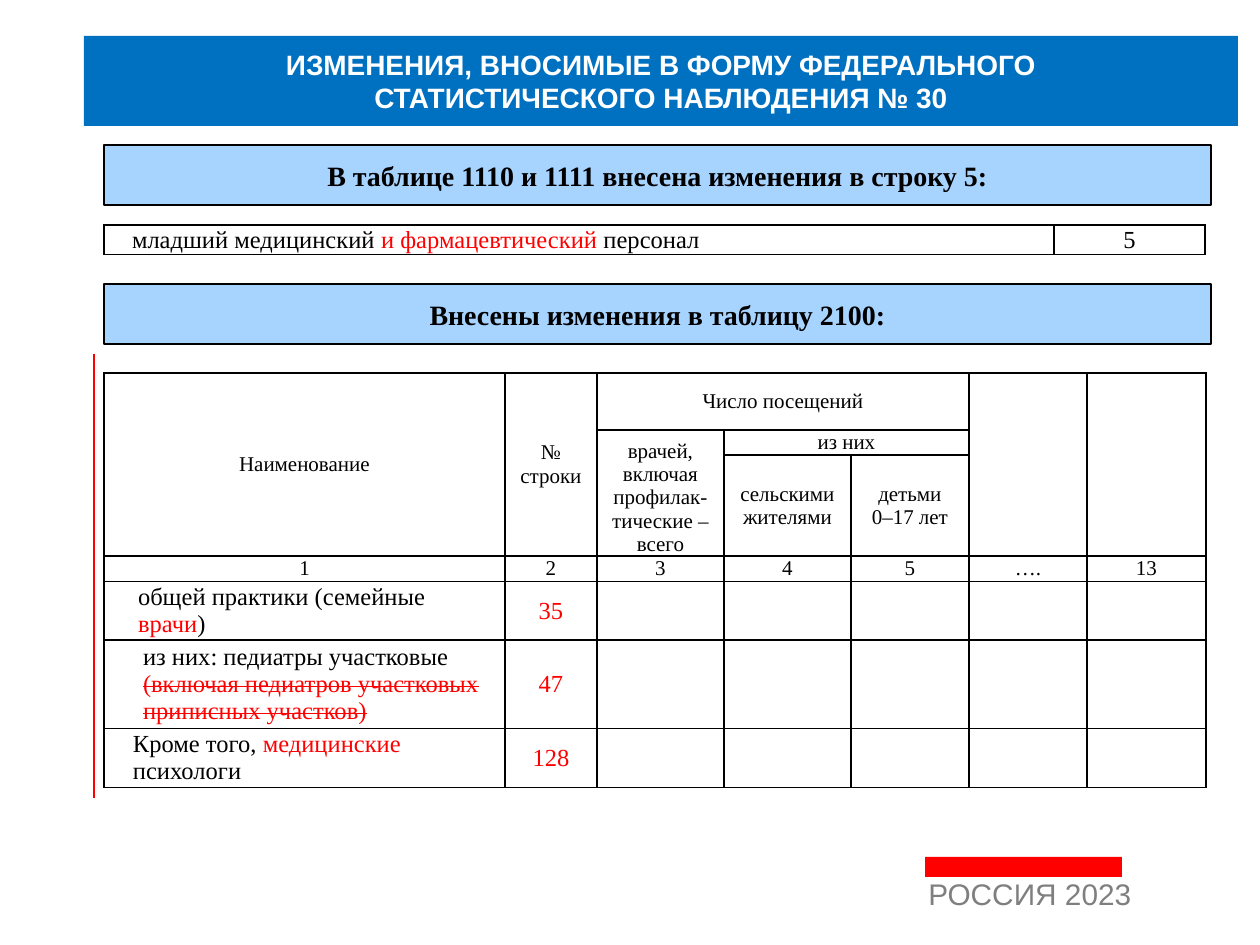
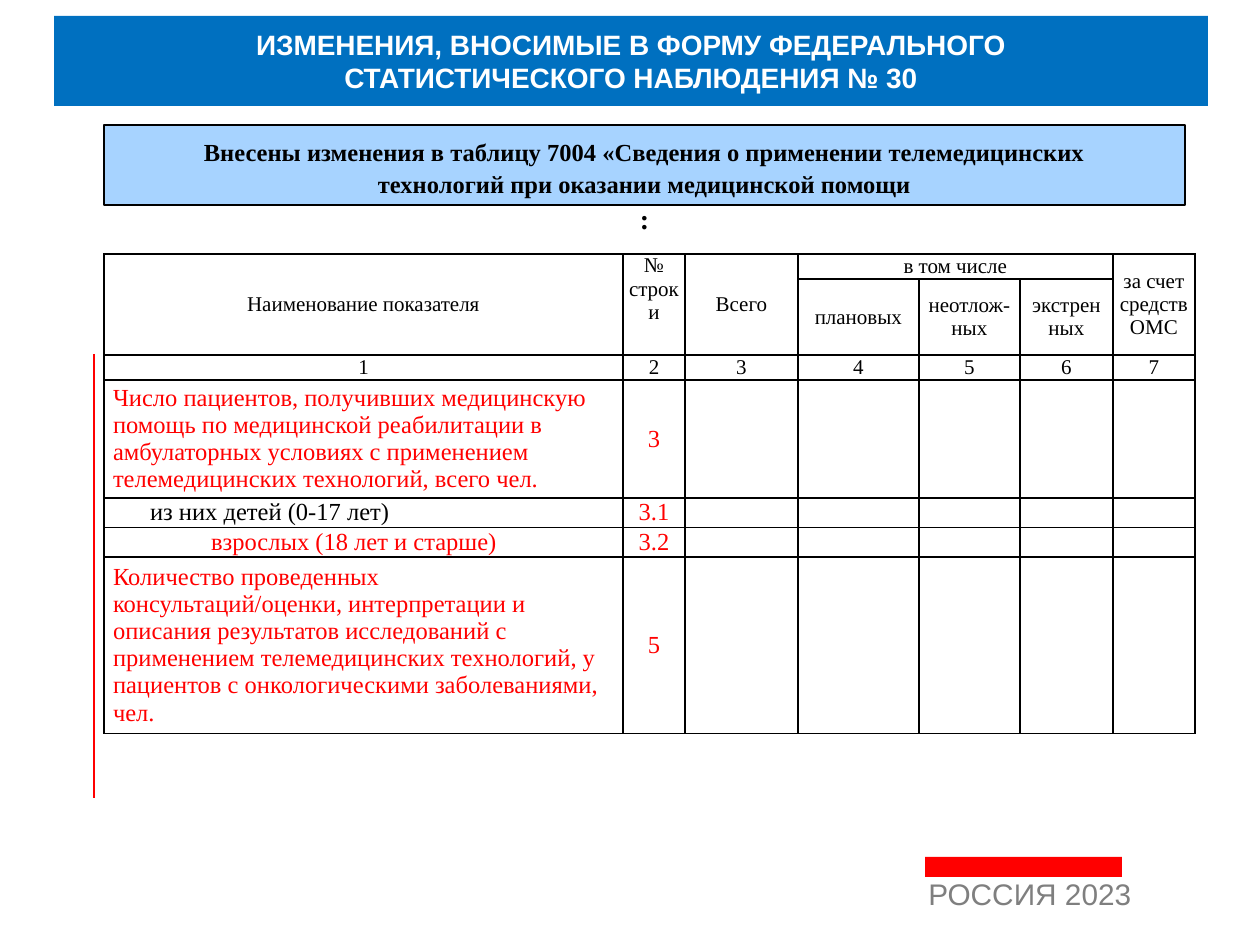
from dataclasses import dataclass

from lxml import etree
from pptx import Presentation
from pptx.dml.color import RGBColor
from pptx.enum.shapes import MSO_CONNECTOR, MSO_SHAPE
from pptx.enum.text import MSO_ANCHOR, PP_ALIGN
from pptx.oxml.ns import qn
from pptx.util import Emu, Pt

RECT, STRAIGHT = MSO_SHAPE.RECTANGLE, MSO_CONNECTOR.STRAIGHT
LEFT, CENTER = PP_ALIGN.LEFT, PP_ALIGN.CENTER
TOP, MIDDLE, BOTTOM = MSO_ANCHOR.TOP, MSO_ANCHOR.MIDDLE, MSO_ANCHOR.BOTTOM
PX = 914400 / 126


@dataclass(frozen=True)
class Theme:
    title_fill: str = "0070C0"
    banner_fill: str = "A7D3FF"
    red: str = "FF0000"
    black: str = "000000"
    white: str = "FFFFFF"
    grey: str = "7F7F7F"
    sans: str = "Arial"
    serif: str = "Times New Roman"
    footer_size: int = 17
    title_size: int = 16
    body_size: int = 14
    head_size: int = 12


T = Theme()
TITLE = {"name": T.sans, "size": T.title_size, "bold": True, "color": T.white}
BANNER = {"name": T.serif, "size": T.title_size, "bold": True, "color": T.black}
FOOTER = {"name": T.sans, "size": T.footer_size, "color": T.grey}
HEAD = {"name": T.serif, "size": T.head_size, "color": T.black}
BODY = {"name": T.serif, "size": T.body_size, "color": T.black}
RED = {"color": T.red}
STRUCK = {"color": T.red, "strike": "sngStrike"}
SMALL = {"size": T.body_size}


def px(*lengths):
    return [Emu(round(n * PX)) for n in lengths]


def write(tf, content, base, align=CENTER):
    """Fill tf with a string or (text, format) runs; a newline starts a paragraph."""
    runs = [(content, {})] if isinstance(content, str) else content
    p = tf.paragraphs[0]
    p.alignment = align
    for text, changes in runs:
        fmt = base | changes
        for i, line in enumerate(text.split("\n")):
            if i:
                p = tf.add_paragraph()
                p.alignment = align
            r = p.add_run()
            r.text = line
            for key, value in fmt.items():
                if key == "color":
                    r.font.color.rgb = RGBColor.from_string(value)
                elif key == "strike":
                    r._r.get_or_add_rPr().set("strike", value)
                else:
                    setattr(r.font, key, Pt(value) if key == "size" else value)


blank = [""] * 5
pages = [
    {
        "title_at": (84, 36),
        "banners": [
            ((104, 145, 1107, 60), "В таблице 1110 и 1111 внесена изменения в строку 5:"),
            ((104, 284, 1107, 60), "Внесены изменения в таблицу 2100:"),
        ],
        "tables": [
            {
                "at": (104, 373),
                "cols": [401, 92, 127, 127, 118, 118, 119],
                "rows": [57, 23, 93, 24, 54, 81, 54],
                "head_rows": 4,
                "merges": [(0, 0, 2, 0), (0, 1, 2, 1), (0, 2, 0, 4), (0, 5, 2, 5),
                           (0, 6, 2, 6), (1, 2, 2, 2), (1, 3, 1, 4)],
                "anchors": {(1, 2): BOTTOM},
                "indents": [25, 30, 20],
                "cells": [
                    ["Наименование", "№\nстроки", "Число посещений", "", "", "", ""],
                    ["", "", "врачей, включая профилак-тические – всего", "из них",
                     "", "", ""],
                    ["", "", "", "сельскими жителями", "детьми\n0–17 лет", "", ""],
                    ["1", "2", "3", "4", "5", "….", "13"],
                    [[("общей практики (семейные ", {}), ("врачи", RED), (")", {})],
                     [("35", RED)], *blank],
                    [[("из них: педиатры участковые ", {}),
                      ("(включая педиатров участковых приписных участков)", STRUCK)],
                     [("47", RED)], *blank],
                    [[("Кроме того, ", {}), ("медицинские ", RED), ("психологи", {})],
                     [("128", RED)], *blank],
                ],
            },
            {
                "at": (104, 225),
                "cols": [950, 151],
                "rows": [27],
                "head_rows": 0,
                "merges": [],
                "anchors": {},
                "indents": [19],
                "cells": [[[("младший медицинский ", {}), ("и фармацевтический", RED),
                            (" персонал", {})], "5"]],
            },
        ],
    },
    {
        "title_at": (54, 16),
        "banners": [
            ((104, 125, 1081, 80),
             [("Внесены изменения в таблицу 7004 «Сведения о применении телемедицинских\n"
               "технологий при оказании медицинской помощи", SMALL), ("\n:", {})]),
        ],
        "tables": [
            {
                "at": (104, 254),
                "cols": [519, 62, 113, 121, 101, 93, 82],
                "rows": [23, 70, 24, 108, 27, 27, 162],
                "head_rows": 3,
                "merges": [(0, 0, 1, 0), (0, 1, 1, 1), (0, 2, 1, 2), (0, 3, 0, 5),
                           (0, 6, 1, 6)],
                "anchors": {(0, 1): TOP},
                "indents": [0, 37, 98, 0],
                "cells": [
                    ["Наименование показателя", "№ строки", "Всего", "в том числе", "", "",
                     "за счет средств ОМС"],
                    ["", "", "", "плановых", "неотлож-ных", "экстрен\nных", ""],
                    ["1", "2", "3", "4", "5", "6", "7"],
                    [[("Число пациентов, получивших медицинскую помощь по медицинской "
                       "реабилитации в амбулаторных условиях с применением "
                       "телемедицинских технологий, всего чел.", RED)],
                     [("3", RED)], *blank],
                    ["из них детей (0-17 лет)", [("3.1", RED)], *blank],
                    [[("взрослых (18 лет и старше)", RED)], [("3.2", RED)], *blank],
                    [[("Количество проведенных консультаций/оценки, интерпретации и\n"
                       "описания результатов исследований с применением "
                       "телемедицинских технологий, у пациентов с онкологическими "
                       "заболеваниями, чел.", RED)],
                     [("5", RED)], *blank],
                ],
            },
        ],
    },
]

prs = Presentation()
prs.slide_width, prs.slide_height = px(1260, 945)

for page in pages:
    s = prs.slides.add_slide(prs.slide_layouts[6])

    # Footer and margin line
    tf = s.shapes.add_textbox(*px(916, 876, 237, 59)).text_frame
    tf.word_wrap = True
    write(tf, "РОССИЯ 2023", FOOTER, LEFT)
    tf.paragraphs[0].line_spacing = 0.8
    tf.paragraphs[0].space_before = Pt(3.4)

    margin_line = s.shapes.add_connector(STRAIGHT, *px(94, 354, 94, 798))
    margin_line.line.color.rgb = RGBColor.from_string(T.red)
    margin_line.line.width = Pt(0.75)
    etree.SubElement(margin_line._element.spPr, qn("a:effectLst"))

    # Footer bar, title band and banners
    title = "ИЗМЕНЕНИЯ, ВНОСИМЫЕ В ФОРМУ ФЕДЕРАЛЬНОГО\nСТАТИСТИЧЕСКОГО НАБЛЮДЕНИЯ № 30"
    boxes = [((925, 857, 197, 20), T.red, "", TITLE),
             ((*page["title_at"], 1154, 90), T.title_fill, title, TITLE)]
    boxes += [(at, T.banner_fill, text, BANNER) for at, text in page["banners"]]
    for at, fill, text, fmt in boxes:
        sp = s.shapes.add_shape(RECT, *px(*at))
        sp.shadow.inherit = False
        sp.fill.solid()
        sp.fill.fore_color.rgb = RGBColor.from_string(fill)
        if fmt is BANNER:
            sp.line.color.rgb = RGBColor.from_string(T.black)
            sp.line.width = Pt(0.75)
        else:
            sp.line.fill.background()
        if not text:
            continue
        tf = sp.text_frame
        tf.word_wrap = fmt is TITLE
        tf.vertical_anchor = MIDDLE
        write(tf, text, fmt)
        if fmt is BANNER and len(tf.paragraphs) > 1:
            tf.vertical_anchor = TOP
            tf.margin_top = px(12)[0]
            for p in tf.paragraphs[1:]:
                p.space_before = Pt(1.5)

    # Tables
    for spec_table in page["tables"]:
        cols, rows = spec_table["cols"], spec_table["rows"]
        head_rows = spec_table["head_rows"]
        table = s.shapes.add_table(
            len(rows), len(cols), *px(*spec_table["at"], sum(cols), sum(rows))).table
        table.first_row = table.horz_banding = False
        for col, width in zip(table.columns, px(*cols)):
            col.width = width
        for row, height in zip(table.rows, px(*rows)):
            row.height = height

        for i, row in enumerate(spec_table["cells"]):
            is_head = i < head_rows
            for j, content in enumerate(row):
                cell = table.cell(i, j)
                cell.margin_left = cell.margin_right = px(6 if is_head else 9)[0]
                cell.margin_top = cell.margin_bottom = 0
                cell.vertical_anchor = spec_table["anchors"].get((i, j), MIDDLE)
                cell.fill.background()
                tcPr = cell._tc.get_or_add_tcPr()
                for k, side in enumerate(("lnL", "lnR", "lnT", "lnB")):
                    ln = etree.Element(qn(f"a:{side}"), w=str(Pt(1)))
                    fill = etree.SubElement(ln, qn("a:solidFill"))
                    etree.SubElement(fill, qn("a:srgbClr"), val=T.black)
                    tcPr.insert(k, ln)

                p = cell.text_frame.paragraphs[0]
                if not content:
                    etree.SubElement(p._p, qn("a:endParaRPr"), sz=str(T.head_size * 100))
                    continue
                is_name = j == 0 and not is_head
                write(cell.text_frame, content, HEAD if is_head else BODY,
                      LEFT if is_name else CENTER)
                if is_name:
                    indent = px(spec_table["indents"][i - head_rows])[0]
                    p._p.get_or_add_pPr().set("marL", str(indent))

        for top, left, bottom, right in spec_table["merges"]:
            table.cell(top, left).merge(table.cell(bottom, right))

prs.save("out.pptx")
